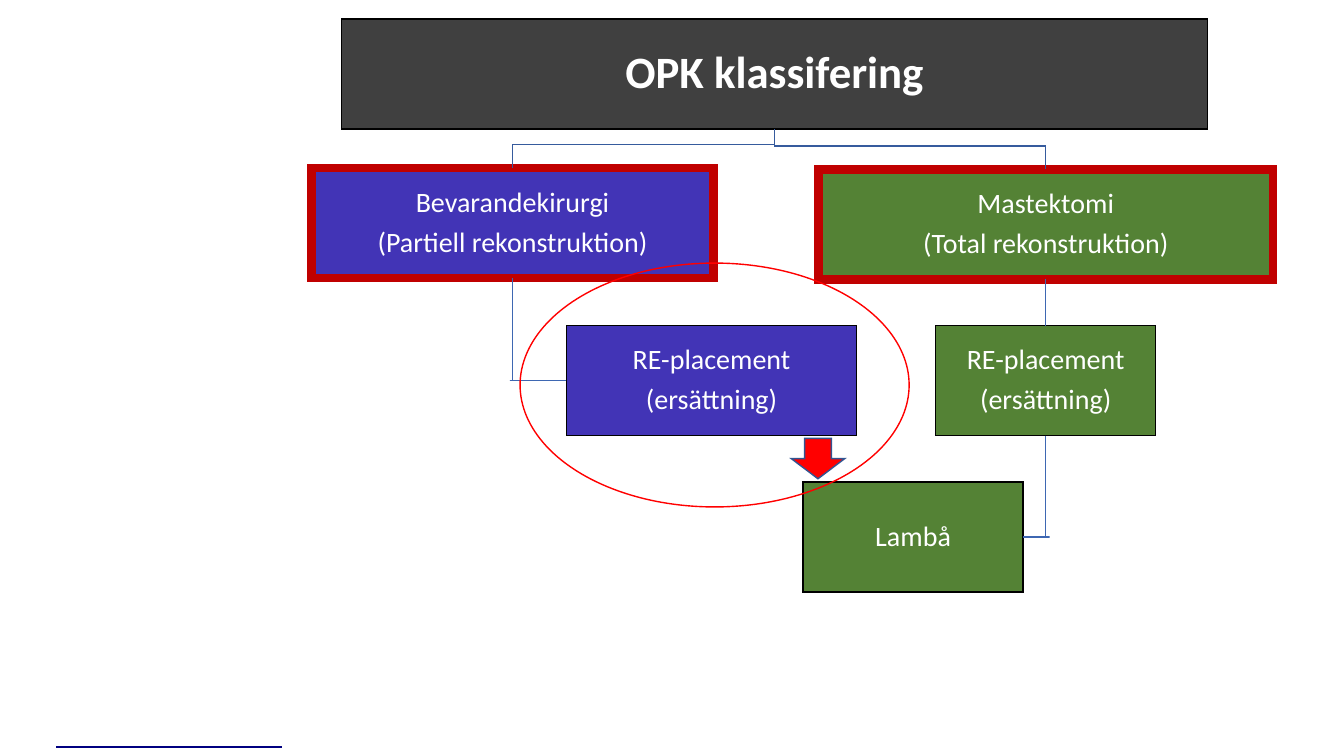
from dataclasses import dataclass

from lxml.etree import SubElement
from pptx import Presentation
from pptx.dml.color import RGBColor as RGB
from pptx.enum.shapes import MSO_CONNECTOR as CONN, MSO_SHAPE as SHAPE
from pptx.enum.text import MSO_ANCHOR as ANCHOR, MSO_AUTO_SIZE as AUTO, PP_ALIGN as ALIGN
from pptx.oxml.ns import qn
from pptx.util import Pt


@dataclass(frozen=True)
class Theme:
    font: str = "Calibri"
    title_size: int = 32
    box_size: int = 20
    text: str = "FFFFFF"
    title: str = "404040"
    partial: str = "4234B6"
    total: str = "548235"
    outline: str = "000000"
    accent: str = "C00000"
    red: str = "FF0000"
    arrow_line: str = "325491"
    bus: str = "365B9D"
    link: str = "3E67B2"
    footer: str = "000080"


T = Theme()
BOX_H = 78.6


def paint(sp, fill, line, width=1):
    """Set fill and a sharp-cornered outline."""
    sp.shadow.inherit = False
    if fill:
        sp.fill.solid()
        sp.fill.fore_color.rgb = RGB.from_string(fill)
    else:
        sp.fill.background()
    sp.line.color.rgb = RGB.from_string(line)
    sp.line.width = Pt(width)
    SubElement(sp.line._get_or_add_ln(), qn("a:miter")).set("lim", "800000")


def write(sp, lines, size, bold=False):
    tf = sp.text_frame
    tf.word_wrap = True
    tf.auto_size = AUTO.NONE
    tf.vertical_anchor = ANCHOR.MIDDLE
    tf.margin_left = tf.margin_right = tf.margin_top = tf.margin_bottom = Pt(1)
    for i, line in enumerate(lines):
        p = tf.add_paragraph() if i else tf.paragraphs[0]
        p.alignment = ALIGN.CENTER
        p.line_spacing = 0.9
        p.space_before = Pt(0)
        p.space_after = Pt(0.35 * size)
        r = p.add_run()
        r.text = line
        r.font.name = T.font
        r.font.size = Pt(size)
        r.font.bold = bold
        r.font.color.rgb = RGB.from_string(T.text)


def add_box(s, lines, x, y, w, fill, line=T.outline, width=1):
    sp = s.shapes.add_shape(SHAPE.RECTANGLE, Pt(x), Pt(y), Pt(w), Pt(BOX_H))
    paint(sp, fill, line, width)
    write(sp, lines, T.box_size)
    return sp


def add_path(s, points, color):
    fb = s.shapes.build_freeform(*points[0], scale=1.0)
    fb.add_line_segments(points[1:], close=False)
    paint(fb.convert_to_shape(), None, color)


def add_line(s, x1, y1, x2, y2, color, width=1):
    c = s.shapes.add_connector(CONN.STRAIGHT, Pt(x1), Pt(y1), Pt(x2), Pt(y2))
    c.line.color.rgb = RGB.from_string(color)
    c.line.width = Pt(width)
    SubElement(c._element.spPr, qn("a:effectLst"))
    return c


def mid_x(sp):
    return sp.left + sp.width // 2


def add_bus(s, parent, child, drop):
    """Stepped line from the parent's bottom to the child's top."""
    y = parent.top + parent.height
    add_path(s, [(mid_x(parent), y), (mid_x(parent), y + Pt(drop)),
                 (mid_x(child), y + Pt(drop)), (mid_x(child), child.top)], T.bus)


def add_side_link(s, parent, child, edge, stub):
    """Line down from the parent, then sideways to the child's edge."""
    x, y = mid_x(parent), child.top + child.height // 2
    add_path(s, [(x, parent.top + parent.height), (x, y),
                 (x + Pt(stub), y), (edge, y)], T.link)


def add_title(s, x, y, w):
    sp = s.shapes.title
    sp.left, sp.top, sp.width, sp.height = Pt(x), Pt(y), Pt(w), Pt(BOX_H)
    paint(sp, T.title, T.outline)
    write(sp, ["OPK klassifering"], T.title_size, bold=True)
    return sp


def add_partial_branch(s, title, x, y, w):
    head = add_box(s, ["Bevarandekirurgi", "(Partiell rekonstruktion)"],
                   x, y, w, T.partial, T.accent, 6)
    child = add_box(s, ["RE-placement", "(ersättning)"],
                    x + 182.1, y + 112.4, 207.4, T.partial)
    add_bus(s, title, head, 11.2)
    add_side_link(s, head, child, child.left, -2)


def add_total_branch(s, title, x, y, w):
    head = add_box(s, ["Mastektomi", "(Total rekonstruktion)"],
                   x, y, w, T.total, T.accent, 6)
    child_w = 157
    child = add_box(s, ["RE-placement", "(ersättning)"],
                    x + (w - child_w) / 2, y + 111.6, child_w, T.total)
    flap = add_box(s, ["Lambå"], x - 10.9, y + 223.2, child_w, T.total)
    add_bus(s, title, head, 12.2)
    link = add_line(s, 0, 0, 1, 1, T.link)
    link.begin_connect(head, 2)
    link.end_connect(child, 0)
    add_side_link(s, child, flap, flap.left + flap.width, 2.9)


def add_highlight(s, x, y, w, h):
    """Red arrow and the ellipse around the partial replacement."""
    arrow = s.shapes.add_shape(SHAPE.DOWN_ARROW, Pt(x + 193.7), Pt(y + 125.3),
                               Pt(38.2), Pt(28.8))
    paint(arrow, T.red, T.arrow_line)
    ring = s.shapes.add_shape(SHAPE.OVAL, Pt(x), Pt(y), Pt(w), Pt(h))
    paint(ring, None, T.red)


def main():
    prs = Presentation()
    prs.slide_width, prs.slide_height = Pt(960), Pt(540)
    s = prs.slides.add_slide(prs.slide_layouts[5])
    # Heading and the two branches
    title = add_title(s, 244.1, 13.6, 618.5)
    add_partial_branch(s, title, 222.5, 120.2, 287.3)
    add_total_branch(s, title, 584.6, 121, 324.7)
    # Emphasis
    add_highlight(s, 371.5, 187.9, 277.9, 174.2)
    # Rule at the bottom edge
    add_line(s, 40.3, 533.8, 201.6, 533.8, T.footer, 1.5)
    prs.save("out.pptx")


if __name__ == "__main__":
    main()
